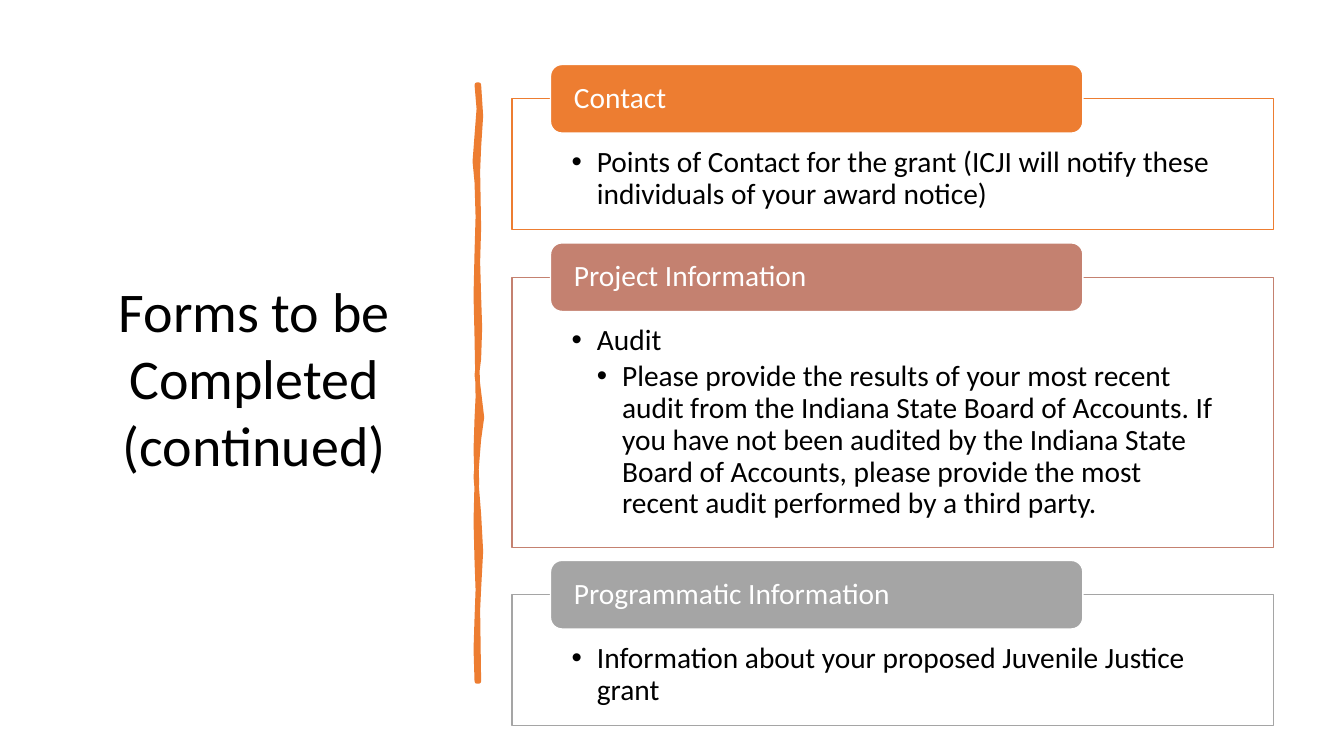
import dataclasses

import lxml.etree
import pptx
import pptx.dml.color
import pptx.enum.shapes
import pptx.enum.text
import pptx.oxml.ns
import pptx.util

PX = 9144  # EMU per px, 100 px to the inch


@dataclasses.dataclass(frozen=True)
class Theme:
    font: str = "Calibri"
    orange: str = "ED7D31"
    clay: str = "C48170"
    gray: str = "A5A5A5"
    white: str = "FFFFFF"
    black: str = "000000"
    title: int = 40
    body: int = 21


THEME = Theme()
LEFT, TOP, WIDTH, GAP = 508, 98, 755, 47
TAB_LEFT, TAB_RISE, TAB_WIDTH, TAB_HEIGHT = 546, 34, 528, 68
INDENT = 25

# placeholder index, height, colour, heading, list of (level, text)
CARDS = [
    (1, 130, THEME.orange, "Contact",
     [(0, "Points of Contact for the grant (ICJI will notify these "
          "individuals of your award notice)")]),
    (2, 268, THEME.clay, "Project Information",
     [(0, "Audit"),
      (1, "Please provide the results of your most recent audit from the "
          "Indiana State Board of Accounts. If you have not been audited by "
          "the Indiana State Board of Accounts, please provide the most "
          "recent audit performed by a third party.")]),
    (4, 130, THEME.gray, "Programmatic Information",
     [(0, "Information about your proposed Juvenile Justice grant")]),
]
SPARE = 3

BRUSH = [
    (475, 84), (477, 115), (475, 146), (474, 170), (475, 226), (474, 260),
    (475, 294), (476, 325), (475, 356), (473, 372), (478, 414), (475, 436),
    (472, 473), (475, 510), (477, 547), (475, 584), (474, 605), (475, 676),
    (473, 676), (472, 644), (473, 613), (474, 585), (473, 557), (472, 517),
    (473, 477), (472, 446), (473, 415), (474, 394), (473, 335), (472, 293),
    (473, 250), (474, 215), (473, 181), (471, 160), (475, 108), (473, 84),
]


def rgb(code):
    return pptx.dml.color.RGBColor.from_string(code)


def place(shape, left, top, width, height):
    shape.left, shape.top = left * PX, top * PX
    shape.width, shape.height = width * PX, height * PX


def paint(shape, fill, line, weight=1):
    shape.fill.solid()
    shape.fill.fore_color.rgb = rgb(fill)
    shape.line.color.rgb = rgb(line)
    shape.line.width = pptx.util.Pt(weight)


def frame(shape, anchor, side, top=0, bottom=0):
    """Set up the text frame of a shape, with its insets in px."""
    text = shape.text_frame
    text.word_wrap = True
    text.auto_size = pptx.enum.text.MSO_AUTO_SIZE.NONE
    text.vertical_anchor = anchor
    text.margin_left = text.margin_right = side * PX
    text.margin_top, text.margin_bottom = top * PX, bottom * PX
    return text


def write(para, words, size, color, align, spacing):
    para.alignment = align
    para.line_spacing = spacing
    para.space_before = pptx.util.Pt(0)
    run = para.add_run()
    run.text = words
    run.font.name = THEME.font
    run.font.size = pptx.util.Pt(size)
    run.font.bold = False
    run.font.color.rgb = rgb(color)


def bullet(para, level):
    para.level = level
    para.space_after = pptx.util.Pt(3)
    props = para._p.get_or_add_pPr()
    props.set("marL", str((level + 1) * INDENT * PX))
    props.set("indent", str(-INDENT * PX))
    mark = lxml.etree.SubElement(props, pptx.oxml.ns.qn("a:buChar"))
    mark.set("char", "•")


def add_title(slide):
    title = slide.shapes.title
    place(title, 66, 269, 372, 212)
    text = frame(title, pptx.enum.text.MSO_ANCHOR.TOP, 10, 5, 5)
    write(text.paragraphs[0], "Forms to be Completed (continued)",
          THEME.title, THEME.black, pptx.enum.text.PP_ALIGN.CENTER, 1.0)


def add_brush(slide):
    pen = slide.shapes.build_freeform(*BRUSH[0], scale=PX)
    pen.add_line_segments(BRUSH[1:], close=True)
    brush = pen.convert_to_shape()
    brush.shadow.inherit = False
    paint(brush, THEME.orange, THEME.orange, 3.25)


def add_list(card, top, height, color, items):
    place(card, LEFT, top, WIDTH, height)
    paint(card, THEME.white, color)
    tint = card.element.find(".//" + pptx.oxml.ns.qn("a:srgbClr"))
    alpha = lxml.etree.SubElement(tint, pptx.oxml.ns.qn("a:alpha"))
    alpha.set("val", "90000")
    text = frame(card, pptx.enum.text.MSO_ANCHOR.TOP, 59, 48, 16)
    for place_no, (level, words) in enumerate(items):
        para = text.add_paragraph() if place_no else text.paragraphs[0]
        write(para, words, THEME.body, THEME.black,
              pptx.enum.text.PP_ALIGN.LEFT, 0.9)
        bullet(para, level)


def add_tab(slide, top, color, heading):
    tab = slide.shapes.add_shape(
        pptx.enum.shapes.MSO_SHAPE.ROUNDED_RECTANGLE,
        TAB_LEFT * PX, top * PX, TAB_WIDTH * PX, TAB_HEIGHT * PX)
    tab.shadow.inherit = False
    paint(tab, color, THEME.white)
    text = frame(tab, pptx.enum.text.MSO_ANCHOR.MIDDLE, 20)
    write(text.paragraphs[0], heading, THEME.body, THEME.white,
          pptx.enum.text.PP_ALIGN.LEFT, 0.9)


def main():
    deck = pptx.Presentation()
    deck.slide_width, deck.slide_height = 1333 * PX, 750 * PX
    slide = deck.slides.add_slide(deck.slide_layouts.get_by_name("Comparison"))
    holders = {item.placeholder_format.idx: item
               for item in slide.placeholders}
    spare = holders[SPARE].element
    spare.getparent().remove(spare)

    add_title(slide)
    add_brush(slide)
    top = TOP
    for index, height, color, heading, items in CARDS:
        add_list(holders[index], top, height, color, items)
        add_tab(slide, top - TAB_RISE, color, heading)
        top += height + GAP
    deck.save("out.pptx")


if __name__ == "__main__":
    main()
